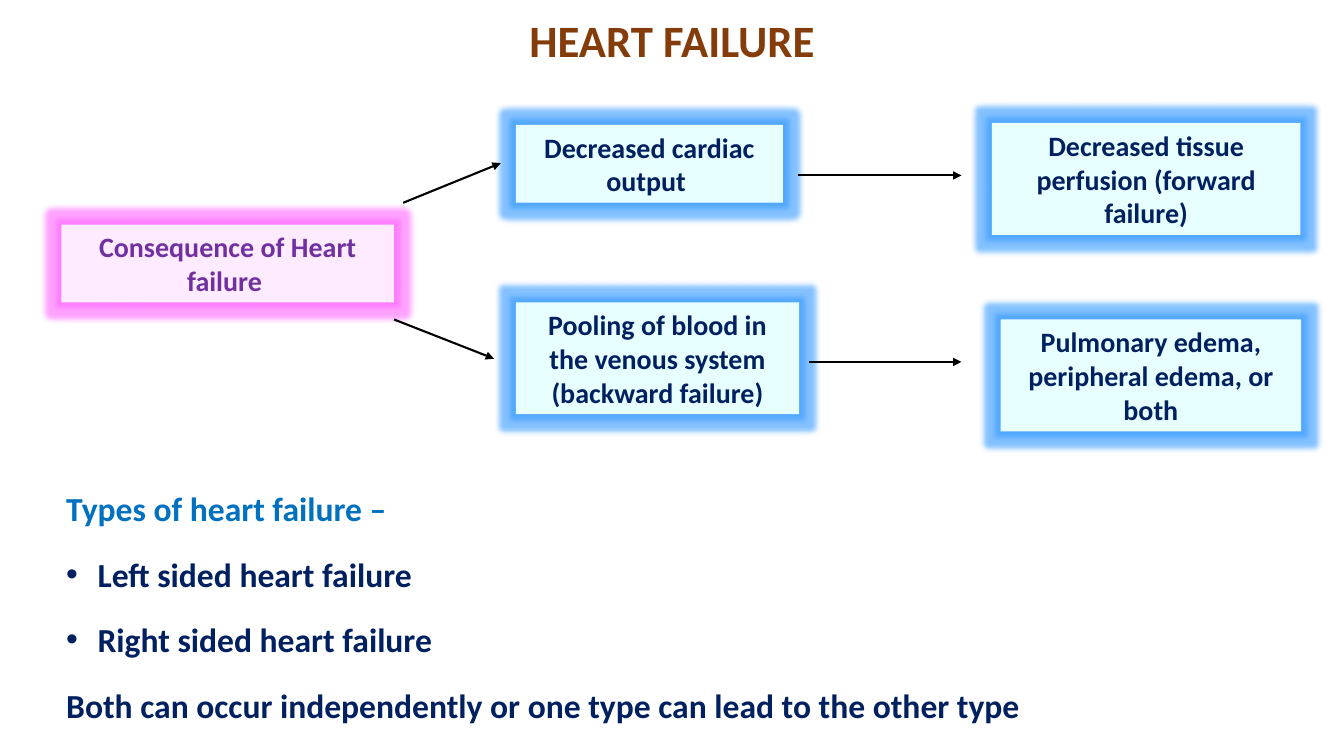
from lxml import etree
from pptx import Presentation
from pptx.dml.color import RGBColor
from pptx.enum.shapes import MSO_CONNECTOR, MSO_SHAPE
from pptx.enum.text import MSO_ANCHOR, PP_ALIGN
from pptx.oxml.ns import qn
from pptx.util import Cm, Pt

RECTANGLE = MSO_SHAPE.RECTANGLE
STRAIGHT = MSO_CONNECTOR.STRAIGHT
CENTER = PP_ALIGN.CENTER
MIDDLE = MSO_ANCHOR.MIDDLE

COLORS = {
    "title": "843C0B",
    "heading": "0070C0",
    "navy": "002060",
    "purple": "7030A0",
    "pink": "FFEBFF",
    "pink_glow": "FF66FF",
    "aqua": "E7FFFF",
    "aqua_glow": "3399FF",
    "arrow": "000000",
}


def color(name):
    return RGBColor.from_string(COLORS[name])


def write(paragraph, text, size, color_name):
    paragraph.text = text
    font = paragraph.runs[0].font
    font.name = "Calibri"
    font.size = Pt(size)
    font.bold = True
    font.color.rgb = color(color_name)


prs = Presentation()
prs.slide_width = Cm(33.87)
prs.slide_height = Cm(19.05)
slide = prs.slides.add_slide(prs.slide_layouts[6])
shapes = slide.shapes

title = shapes.add_textbox(Cm(2.33), Cm(0), Cm(29.21), Cm(2.15)).text_frame
title.word_wrap = True
title.vertical_anchor = MIDDLE
write(title.paragraphs[0], "HEART FAILURE", 32, "title")
title.paragraphs[0].alignment = CENTER
title.paragraphs[0].line_spacing = 0.9

stages = [
    ("Consequence of Heart failure ", 1.55, 5.66, 8.38, 1.96, "pink", "purple"),
    ("Decreased cardiac output ", 13, 3.15, 6.73, 1.96, "aqua", "navy"),
    ("Decreased tissue perfusion (forward failure)", 25, 3.1, 7.77, 2.82, "aqua", "navy"),
    ("Pooling of blood in the venous system (backward failure)", 13, 7.62, 7.14, 2.82, "aqua", "navy"),
    ("Pulmonary edema, peripheral edema, or both", 25.22, 8.05, 7.57, 2.82, "aqua", "navy"),
]
for text, left, top, width, height, fill, ink in stages:
    stage = shapes.add_shape(RECTANGLE, Cm(left), Cm(top), Cm(width), Cm(height))
    stage.shadow.inherit = False
    stage.fill.solid()
    stage.fill.fore_color.rgb = color(fill)
    stage.line.fill.background()
    effects = stage.element.spPr.find(qn("a:effectLst"))
    glow = etree.SubElement(effects, qn("a:glow"), rad="101600")
    glow_color = etree.SubElement(glow, qn("a:srgbClr"), val=COLORS[fill + "_glow"])
    etree.SubElement(glow_color, qn("a:alpha"), val="60000")
    stage.text_frame.word_wrap = True
    stage.text_frame.vertical_anchor = MIDDLE
    write(stage.text_frame.paragraphs[0], text, 20, ink)
    stage.text_frame.paragraphs[0].alignment = CENTER

types = shapes.add_textbox(Cm(1.42), Cm(12.17), Cm(29.87), Cm(6.27)).text_frame
types.word_wrap = True
type_lines = [
    ("Types of heart failure –", "heading", False),
    ("Left sided heart failure", "navy", True),
    ("Right sided heart failure", "navy", True),
    ("Both can occur independently or one type can lead to the other type", "navy", False),
]
for index, (text, ink, bulleted) in enumerate(type_lines):
    line = types.add_paragraph() if index else types.paragraphs[0]
    write(line, text, 24, ink)
    line.space_after = Pt(18)
    if bulleted:
        properties = line._p.get_or_add_pPr()
        properties.set("marL", str(Cm(0.79)))
        properties.set("indent", str(-Cm(0.79)))
        etree.SubElement(properties, qn("a:buFont"), typeface="Arial")
        etree.SubElement(properties, qn("a:buChar"), char="•")

arrows = [
    (10.16, 5.11, 12.62, 4.11),
    (9.93, 8.05, 12.45, 9.04),
    (20.12, 4.42, 24.23, 4.42),
    (20.4, 9.12, 24.23, 9.12),
]
for ends in arrows:
    arrow = shapes.add_connector(STRAIGHT, *[Cm(end) for end in ends])
    arrow.line.color.rgb = color("arrow")
    arrow.line.width = Pt(1.5)
    etree.SubElement(arrow.line._get_or_add_ln(), qn("a:tailEnd"), type="triangle")
    etree.SubElement(arrow._element.spPr, qn("a:effectLst"))

prs.save("out.pptx")
